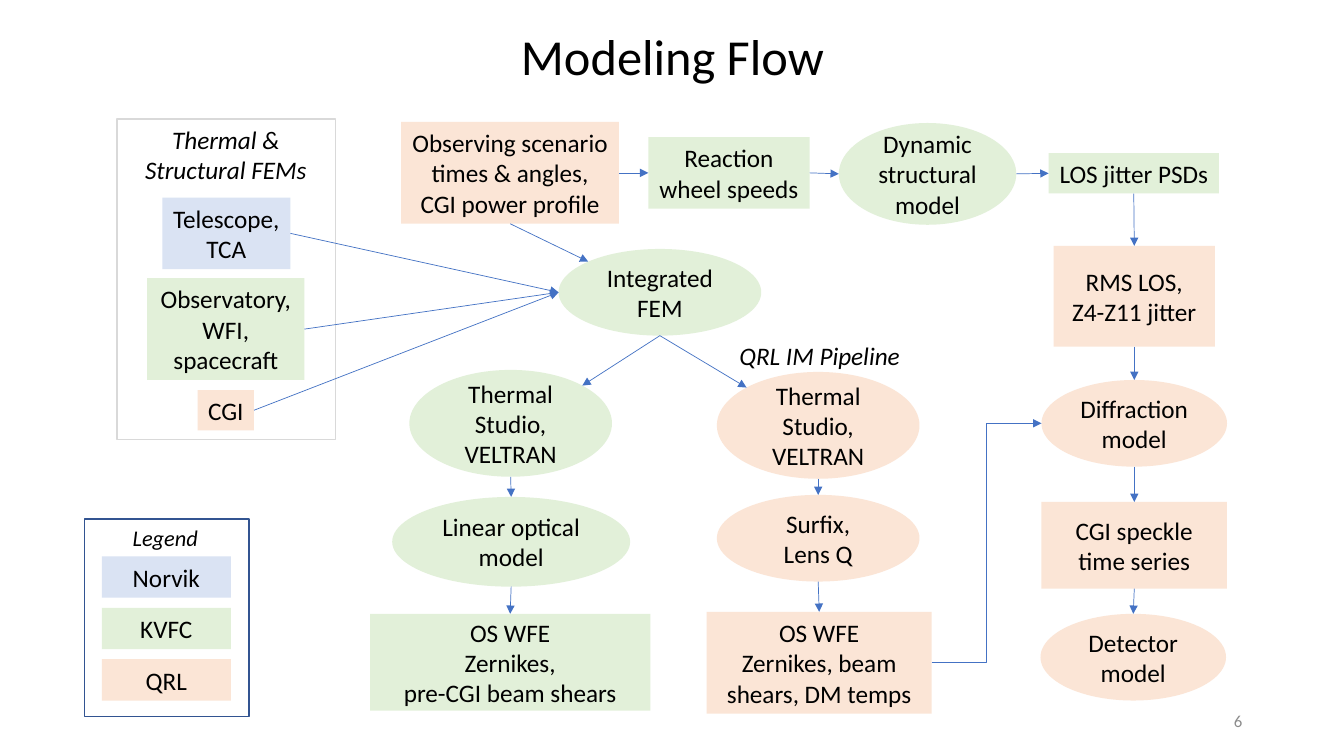
from math import sqrt
from pptx import Presentation
from pptx.dml.color import RGBColor
from pptx.enum.shapes import MSO_CONNECTOR as CONN, MSO_SHAPE as SHAPE
from pptx.enum.text import MSO_ANCHOR as ANCHOR, PP_ALIGN as ALIGN
from pptx.oxml.ns import qn
from pptx.util import Inches, Pt
from lxml import etree

# Content: owner colours double as the legend
OWNERS = {"Norvik": "DAE3F3", "KVFC": "E2F0D9", "QRL": "FBE5D6"}
ARROW = "4472C4"

# key: (kind, owner, left, top, width, height, text); "fit" boxes do not wrap
NODES = {
    "telescope": ("fit", "Norvik", 1.61, 1.96, 1.27, 0.71, "Telescope,\nTCA"),
    "observatory": ("fit", "KVFC", 1.46, 2.76, 1.56, 1.01, "Observatory,\nWFI,\nspacecraft"),
    "cgi": ("fit", "QRL", 1.96, 3.87, 0.56, 0.4, "CGI"),
    "scenario": ("fit", "QRL", 3.98, 1.21, 2.16, 1.01,
                 "Observing scenario\ntimes & angles,\nCGI power profile"),
    "wheels": ("fit", "KVFC", 6.43, 1.36, 1.6, 0.71, "Reaction\nwheel speeds"),
    "dynamic": ("oval", "KVFC", 8.32, 1.22, 1.76, 1.01, "Dynamic\nstructural\nmodel"),
    "psds": ("fit", "KVFC", 10.4, 1.52, 1.69, 0.4, "LOS jitter PSDs"),
    "fem": ("oval", "KVFC", 5.54, 2.47, 2.01, 0.86, "Integrated FEM"),
    "thermal_left": ("oval", "KVFC", 4.06, 3.67, 2.01, 1.06, "Thermal Studio,\nVELTRAN"),
    "optical": ("oval", "KVFC", 3.89, 4.93, 2.36, 0.89, "Linear optical model"),
    "wfe_left": ("box", "KVFC", 3.67, 6.09, 2.78, 0.96,
                 "OS WFE\nZernikes,\npre-CGI beam shears"),
    "thermal_right": ("oval", "QRL", 7.11, 3.69, 2.01, 1.06, "Thermal Studio,\nVELTRAN"),
    "lens": ("oval", "QRL", 7.11, 4.91, 2.01, 0.86, "Surfix,\nLens Q"),
    "wfe_right": ("box", "QRL", 7.01, 6.07, 2.23, 1.01,
                  "OS WFE\nZernikes, beam shears, DM temps"),
    "rms": ("box", "QRL", 10.45, 2.44, 1.6, 1, "RMS LOS,\nZ4-Z11 jitter"),
    "diffraction": ("oval", "QRL", 10.33, 3.77, 1.84, 0.86, "Diffraction\nmodel"),
    "speckle": ("box", "QRL", 10.33, 4.98, 1.84, 0.86, "CGI speckle\ntime series"),
    "detector": ("oval", "QRL", 10.32, 6.09, 1.84, 0.86, "Detector\nmodel"),
}

# (from, side, to, side)
FLOWS = [
    ("telescope", "right", "fem", "left"),
    ("observatory", "right", "fem", "left"),
    ("cgi", "right", "fem", "left"),
    ("scenario", "right", "wheels", "left"),
    ("wheels", "right", "dynamic", "left"),
    ("dynamic", "right", "psds", "left"),
    ("scenario", "bottom", "fem", "top left"),
    ("fem", "bottom", "thermal_left", "top right"),
    ("fem", "bottom", "thermal_right", "top left"),
    ("thermal_left", "bottom", "optical", "top"),
    ("optical", "bottom", "wfe_left", "top"),
    ("thermal_right", "bottom", "lens", "top"),
    ("lens", "bottom", "wfe_right", "top"),
    ("psds", "bottom", "rms", "top"),
    ("rms", "bottom", "diffraction", "top"),
    ("diffraction", "bottom", "speckle", "top"),
    ("speckle", "bottom", "detector", "top"),
    ("wfe_right", "right", "diffraction", "left"),
]

# (left, top, width, height, line colour)
FRAMES = [(1.16, 1.18, 2.17, 3.18, "D9D9D9"), (0.84, 5.15, 1.63, 1.96, "325491")]

# (left, top, width, height, text, size, italic, colour, alignment, line spacing)
LABELS = [
    (0.92, 0.16, 11.5, 0.85, "Modeling Flow", 36, False, "000000", ALIGN.CENTER, 0.9),
    (1.33, 1.18, 1.82, 0.71, "Thermal &\nStructural FEMs", 18, True, "000000", ALIGN.CENTER, 1.0),
    (6.98, 3.33, 2.3, 0.4, "QRL IM Pipeline", 18, True, "000000", ALIGN.CENTER, 1.0),
    (1.21, 5.15, 0.86, 0.37, "Legend", 16, True, "000000", ALIGN.CENTER, 1.0),
    (9.42, 6.95, 3, 0.4, "6", 12, False, "8C8C8C", ALIGN.RIGHT, 1.0),
]

SITES = {"top": 0, "left": 1, "bottom": 2, "right": 3}
DIRECTIONS = {"top": (0, -1), "left": (-1, 0), "bottom": (0, 1), "right": (1, 0),
              "top left": (-sqrt(0.5), -sqrt(0.5)), "top right": (sqrt(0.5), -sqrt(0.5))}


def rgb(value):
    return RGBColor.from_string(value)


def write(sp, text, size=18, italic=False, color="000000", align=ALIGN.CENTER,
          spacing=1.0, wrap=True):
    tf = sp.text_frame
    tf.text = text
    tf.word_wrap = wrap
    tf.vertical_anchor = ANCHOR.MIDDLE
    for p in tf.paragraphs:
        p.alignment, p.line_spacing = align, spacing
        for r in p.runs:
            r.font.name, r.font.size, r.font.italic = "Calibri", Pt(size), italic
            r.font.color.rgb = rgb(color)


def add_block(s, kind, box, fill=None, line=None):
    preset = SHAPE.OVAL if kind == "oval" else SHAPE.RECTANGLE
    sp = s.shapes.add_shape(preset, *map(Inches, box))
    sp.shadow.inherit = False
    if fill:
        sp.fill.solid()
        sp.fill.fore_color.rgb = rgb(fill)
    else:
        sp.fill.background()
    if line:
        sp.line.color.rgb = rgb(line)
        sp.line.width = Pt(1)
    else:
        sp.line.fill.background()
    return sp


def edge_point(key, side):
    x, y, w, h = NODES[key][2:6]
    dx, dy = DIRECTIONS[side]
    return Inches(x + w / 2 * (1 + dx)), Inches(y + h / 2 * (1 + dy))


def add_flow(s, shapes, start, out, end, into):
    bent = (start, end) == ("wfe_right", "diffraction")
    c = s.shapes.add_connector(CONN.ELBOW if bent else CONN.STRAIGHT,
                               *edge_point(start, out), *edge_point(end, into))
    if NODES[start][0] != "oval":
        c.begin_connect(shapes[start], SITES[out])
    if NODES[end][0] != "oval":
        c.end_connect(shapes[end], SITES[into])
    c.line.color.rgb = rgb(ARROW)
    c.line.width = Pt(0.5)
    etree.SubElement(c.line._get_or_add_ln(), qn("a:tailEnd"), type="triangle")
    etree.SubElement(c._element.spPr, qn("a:effectLst"))


def main():
    prs = Presentation()
    prs.slide_width, prs.slide_height = Inches(13.33), Inches(7.5)
    s = prs.slides.add_slide(prs.slide_layouts[6])

    # Frames
    for *box, line in FRAMES:
        add_block(s, "box", box, line=line)

    # Flow nodes
    shapes = {}
    for key, (kind, owner, *box, text) in NODES.items():
        shapes[key] = add_block(s, kind, box, OWNERS[owner])
        write(shapes[key], text, wrap=kind != "fit")

    # Arrows
    for flow in FLOWS:
        add_flow(s, shapes, *flow)

    # Title, captions and page number
    for *box, text, size, italic, color, align, spacing in LABELS:
        sp = s.shapes.add_textbox(*map(Inches, box))
        write(sp, text, size, italic, color, align, spacing, wrap=not italic)

    # Legend
    for i, (owner, fill) in enumerate(OWNERS.items()):
        write(add_block(s, "box", (1.01, 5.52 + 0.51 * i, 1.28, 0.41), fill), owner)

    prs.save("out.pptx")


if __name__ == "__main__":
    main()
